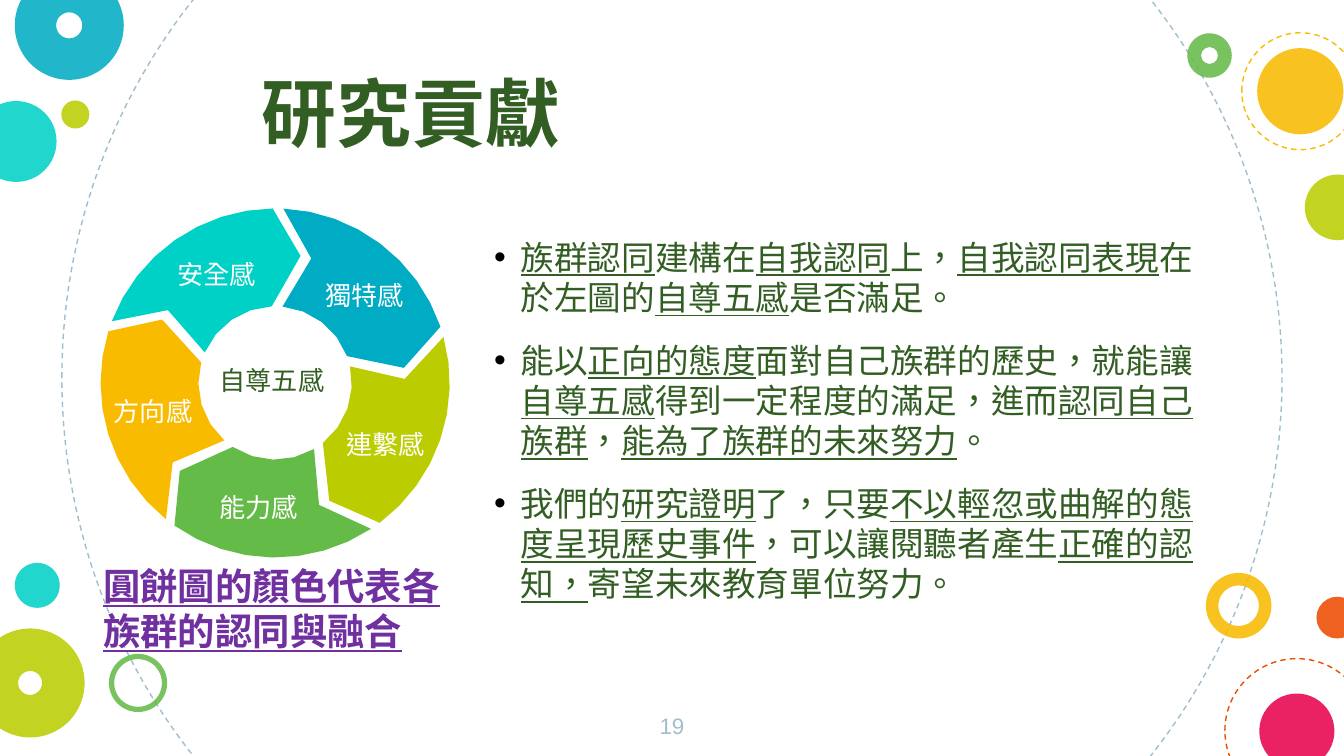
from math import cos, radians, sin

from lxml.etree import SubElement
from pptx import Presentation
from pptx.dml.color import RGBColor
from pptx.enum.dml import MSO_LINE
from pptx.enum.shapes import MSO_SHAPE
from pptx.enum.text import PP_ALIGN
from pptx.oxml.ns import qn
from pptx.util import Cm, Pt

COLORS = {
    "sky": "A1BECC", "teal": "00D1C6", "yellow": "F8BB00", "blue": "00ACC3",
    "lime": "BBCD00", "orange": "ED4A00", "green": "65BB48", "pink": "E8004C",
    "forest": "325E23", "purple": "7030A0", "white": "FFFFFF", "black": "000000",
}
CJK = "Noto Sans CJK SC"

presentation = Presentation()
presentation.slide_width = Cm(25.4)
presentation.slide_height = Cm(14.29)
slide = presentation.slides.add_slide(presentation.slide_layouts[6])


def rgb(name):
    return RGBColor.from_string(COLORS[name])


def write(text, left, top, width, height, size=14, color="forest", font=CJK,
          bold=False, wrap=True, align=None, bullet=False, inset=0.13):
    box = slide.shapes.add_textbox(Cm(left), Cm(top), Cm(width), Cm(height))
    frame = box.text_frame
    frame.word_wrap = wrap
    frame.margin_top = Cm(inset)
    for index, line in enumerate(text.split("\n")):
        paragraph = frame.paragraphs[0] if index == 0 else frame.add_paragraph()
        paragraph.alignment = align
        paragraph.line_spacing = Pt(size * 1.2)
        if bullet:
            paragraph.space_after = Pt(12)
            properties = paragraph._p.get_or_add_pPr()
            properties.set("marL", str(Cm(0.5)))
            properties.set("indent", str(Cm(-0.5)))
            bullet_color = SubElement(properties, qn("a:buClr"))
            SubElement(bullet_color, qn("a:srgbClr"), val=COLORS["black"])
            SubElement(properties, qn("a:buFont"), typeface="Arial")
            SubElement(properties, qn("a:buChar"), char="•")
        for position, piece in enumerate(line.split("_")):
            if not piece:
                continue
            run = paragraph.add_run()
            run.text = piece
            run.font.size = Pt(size)
            run.font.bold = bold
            run.font.underline = position % 2 == 1
            run.font.color.rgb = rgb(color)
            run.font.name = font
            run_properties = run._r.get_or_add_rPr()
            run_properties.set("lang", "zh-TW")
            SubElement(run_properties, qn("a:ea"), typeface=font)


DASHED, SOLID = -1, 0
bubbles = [
    (1.17, -4.39, 23.06, "sky", DASHED),
    (-0.46, 1.91, 1.53, "teal", SOLID),
    (22.79, 10.83, 1.24, "yellow", 0.19),
    (0.28, -0.55, 2.06, "blue", 0.38),
    (1.16, 1.9, 0.53, "lime", SOLID),
    (23.15, 12.45, 2.72, "orange", DASHED),
    (2.06, 12.36, 1.1, "green", 0.09),
    (24.88, 11.28, 0.79, "orange", SOLID),
    (-0.46, 11.88, 2.06, "lime", 0.39),
    (23.8, 13.11, 1.42, "pink", SOLID),
    (22.44, 0.63, 0.84, "green", 0.31),
    (23.76, 0.91, 1.63, "yellow", SOLID),
    (24.66, 3.3, 1.24, "lime", SOLID),
    (23.47, 0.62, 2.21, "yellow", DASHED),
    (0.28, 10.64, 0.85, "teal", SOLID),
]
for left, top, diameter, color, thickness in bubbles:
    kind = MSO_SHAPE.DONUT if thickness > 0 else MSO_SHAPE.OVAL
    bubble = slide.shapes.add_shape(kind, Cm(left), Cm(top), Cm(diameter), Cm(diameter))
    bubble.shadow.inherit = False
    if thickness == DASHED:
        bubble.fill.background()
        bubble.line.color.rgb = rgb(color)
        bubble.line.width = Pt(0.75)
        bubble.line.dash_style = MSO_LINE.DASH
        continue
    if thickness > 0:
        bubble.adjustments[0] = thickness
    bubble.fill.solid()
    bubble.fill.fore_color.rgb = rgb(color)
    bubble.line.fill.background()
    fill_color = bubble._element.spPr.find(qn("a:solidFill")).find(qn("a:srgbClr"))
    SubElement(fill_color, qn("a:alpha"), val="87000")

write("19", 12.05, 13.21, 1.3, 1.09, size=12, color="sky", font="Arial",
      align=PP_ALIGN.CENTER, inset=0.25)
write("研究貢獻", 4.7, 1.14, 7.39, 1.96, size=40, bold=True)

CENTER_X, CENTER_Y, OUTER, INNER, TIP = 5.2, 7.24, 3.3, 1.45, 2.45
OUTER_STEPS, INNER_STEPS = 8, 4
outer_arc = [(OUTER, 71.2 - 68.5 * step / OUTER_STEPS) for step in range(OUTER_STEPS + 1)]
inner_arc = [(INNER, 5.5 + 64 * step / INNER_STEPS) for step in range(INNER_STEPS + 1)]
outline = outer_arc + [(TIP, 16.2)] + inner_arc + [(TIP, 83.3)]
wheel = slide.shapes.add_group_shape()
for turn, color in [(3, "yellow"), (2, "green"), (1, "lime"), (0, "blue"), (4, "teal")]:
    points = []
    for radius, angle in outline:
        direction = radians(angle + 72 * turn)
        points.append((Cm(CENTER_X + radius * sin(direction)),
                       Cm(CENTER_Y - radius * cos(direction))))
    builder = wheel.shapes.build_freeform(*points[0])
    builder.add_line_segments(points[1:], close=True)
    segment = builder.convert_to_shape()
    segment.shadow.inherit = False
    segment.fill.solid()
    segment.fill.fore_color.rgb = rgb(color)
    segment.line.fill.background()

write("自尊五感", 3.9, 6.76, 2.51, 0.86, wrap=False)

contributions = (
    "_族群認同_建構在_自我認同_上，_自我認同表現_在於左圖的_自尊五感_是否滿足。\n"
    "能以_正向的態度_面對自己族群的歷史，就能讓_自尊五感_得到一定程度的滿足，"
    "進而_認同自己族群_，_能為了族群的未來努力_。\n"
    "我們的_研究證明_了，只要_不以輕忽或曲解的態度呈現歷史事件_，"
    "可以讓閱聽者產生_正確的認知，_寄望未來教育單位努力。"
)
write(contributions, 9.09, 4.34, 14, 7.26, size=18, bullet=True)

feelings = [
    ("安全感", 3.1, 4.75),
    ("獨特感", 5.9, 5.15),
    ("連繫感", 6.3, 7.96),
    ("能力感", 3.9, 9.15),
    ("方向感", 1.9, 7.35),
]
for feeling, left, top in feelings:
    write(feeling, left, top, 2.01, 0.86, color="white", wrap=False)

write("_圓餅圖的顏色代表各族群的認同與融合_", 1.7, 10.52, 7.39, 1.96,
      size=20, color="purple", bold=True)

presentation.save("out.pptx")
